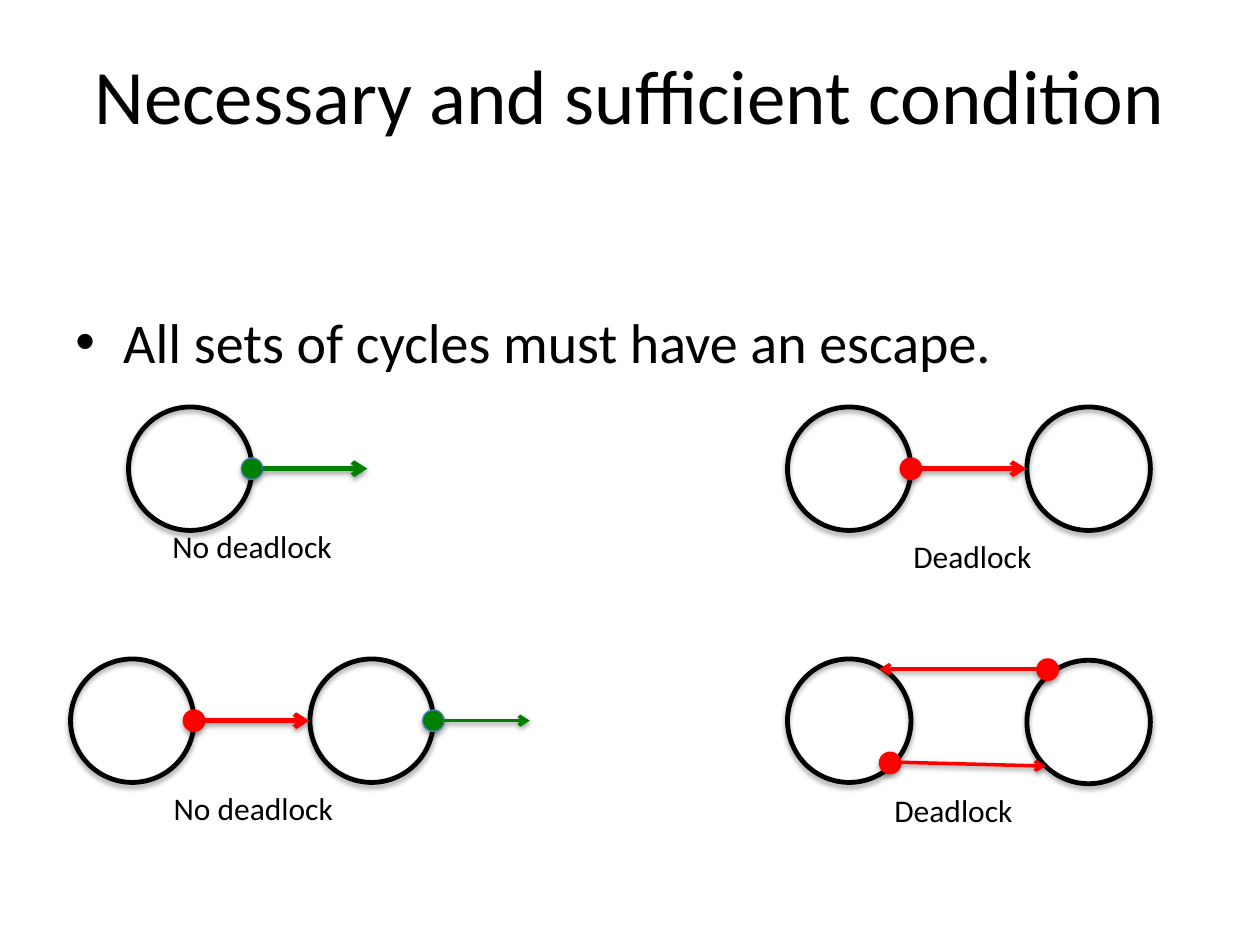
"""Build a slide on cycles, escapes and deadlock."""
from lxml.etree import SubElement
from pptx import Presentation
from pptx.dml.color import RGBColor
from pptx.enum.shapes import MSO_CONNECTOR, MSO_SHAPE
from pptx.enum.text import PP_ALIGN
from pptx.oxml.ns import qn
from pptx.util import Inches, Pt

BLACK = RGBColor(0, 0, 0)
RED = RGBColor(255, 0, 0)
GREEN = RGBColor(0, 128, 0)
BLUE = RGBColor(0x4B, 0x7E, 0xBC)

TITLE = "Necessary and sufficient condition"
POINT = "All sets of cycles must have an escape."
LABELS = [
    ("No deadlock", 1.27, 4.13, 1.48),
    ("Deadlock", 7.15, 4.21, 1.15),
    ("Deadlock", 7, 6.23, 1.15),
    ("No deadlock", 1.28, 6.21, 1.48),
]
RING, DOT = 0.98, 0.17
RINGS = [(1.02, 3.23), (6.25, 3.23), (8.15, 3.23),
         (6.25, 5.23), (8.15, 5.24), (0.56, 5.23), (2.46, 5.23)]
EXITS = [
    (1.02, 3.23, GREEN, 0.83, 2.75),
    (6.25, 3.23, RED, 0.83, 2.75),
    (0.56, 5.23, RED, 0.83, 2.75),
    (2.46, 5.23, GREEN, 0.68, 2),
]
CROSS = [
    ((8.23, 5.23), (8.23, 5.31), (6.98, 5.31)),
    ((6.98, 5.97), (7.15, 6.05), (8.3, 6.08)),
]

deck = Presentation()
deck.slide_width, deck.slide_height = Inches(10), Inches(7.5)
slide = deck.slides.add_slide(deck.slide_layouts[6])
shapes = slide.shapes


def write(text, left, top, width, height, size=18, align=PP_ALIGN.LEFT,
          inset=0.05, wrap=True, bullet=None):
    box = shapes.add_textbox(*map(Inches, (left, top, width, height)))
    frame = box.text_frame
    frame.word_wrap = wrap
    frame.margin_top = Inches(inset)
    para = frame.paragraphs[0]
    para.alignment = align
    run = para.add_run()
    run.text = text
    run.font.name, run.font.size = "Calibri", Pt(size)
    run.font.color.rgb = BLACK
    if bullet:
        props = para._p.get_or_add_pPr()
        props.set("marL", str(Inches(0.38)))
        props.set("indent", str(Inches(-0.38)))
        SubElement(props, qn("a:buFont"), typeface="Arial")
        SubElement(props, qn("a:buChar"), char=bullet)


def shade(effects, alpha, dist):
    glow = SubElement(effects, qn("a:outerShdw"), blurRad=str(Pt(3.1)),
                      dist=str(Pt(dist)), dir="5400000", rotWithShape="0")
    tint = SubElement(glow, qn("a:srgbClr"), val="000000")
    SubElement(tint, qn("a:alpha"), val=str(alpha * 1000))


def circle(left, top, size, line, width, fill=None):
    disc = shapes.add_shape(MSO_SHAPE.OVAL,
                            *map(Inches, (left, top, size, size)))
    if fill is None:
        disc.fill.background()
    else:
        disc.fill.solid()
        disc.fill.fore_color.rgb = fill
    disc.line.color.rgb, disc.line.width = line, Pt(width)
    disc.shadow.inherit = False
    shade(disc._element.spPr.find(qn("a:effectLst")), 35, 1.8)


def dot(left, top, fill):
    circle(left, top, DOT, BLUE if fill == GREEN else fill, 0.75, fill)


def arrow(start, end, color, width):
    link = shapes.add_connector(MSO_CONNECTOR.STRAIGHT,
                                *map(Inches, (*start, *end)))
    link.line.color.rgb, link.line.width = color, Pt(width)
    SubElement(link.line._get_or_add_ln(), qn("a:tailEnd"), type="arrow")
    shade(SubElement(link._element.spPr, qn("a:effectLst")), 38, 1.6)


write(TITLE, 0.5, 0.3, 9, 1.25, size=44, align=PP_ALIGN.CENTER, inset=0.08)
write(POINT, 0.5, 1.75, 9, 4.95, size=32, inset=0.69, bullet="•")
for left, top in RINGS:
    circle(left, top, RING, BLACK, 2.75)
for left, top, color, reach, width in EXITS:
    edge, mid = left + RING, top + RING / 2
    dot(edge - DOT / 2, mid - DOT / 2, color)
    begin = edge + DOT / 2
    arrow((begin, mid), (begin + reach, mid), color, width)
for spot, start, end in CROSS:
    dot(*spot, RED)
    arrow(start, end, RED, 2)
for text, left, top, width in LABELS:
    write(text, left, top, width, 0.4, wrap=False)

deck.save("out.pptx")
